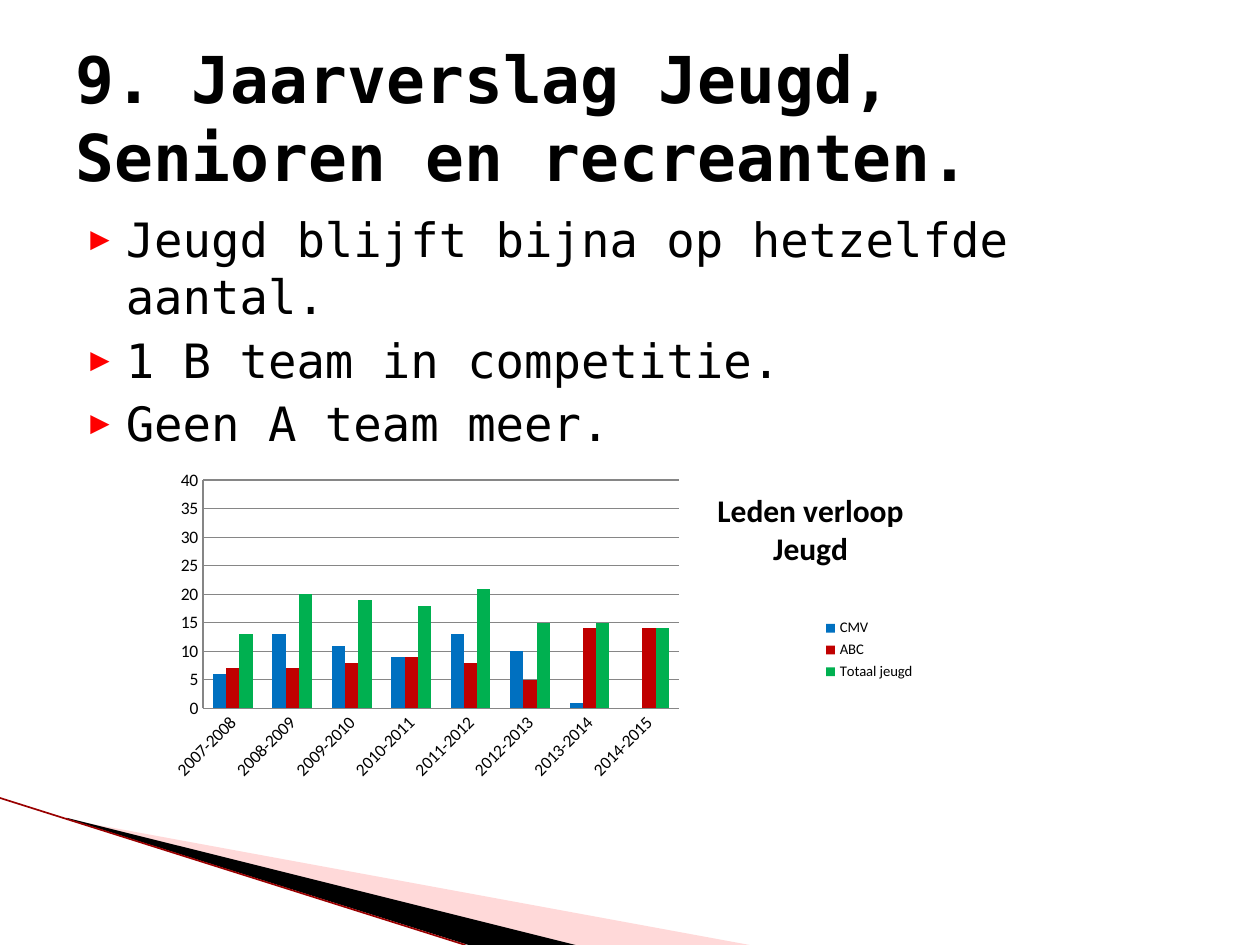
from lxml import etree
from pptx import Presentation
from pptx.chart.data import CategoryChartData
from pptx.dml.color import RGBColor
from pptx.enum.chart import XL_CHART_TYPE, XL_LEGEND_POSITION, XL_TICK_MARK
from pptx.enum.shapes import MSO_CONNECTOR
from pptx.enum.text import MSO_ANCHOR
from pptx.oxml.ns import qn
from pptx.util import Pt

COLUMN = XL_CHART_TYPE.COLUMN_CLUSTERED
RIGHT = XL_LEGEND_POSITION.RIGHT
NONE = XL_TICK_MARK.NONE
STRAIGHT = MSO_CONNECTOR.STRAIGHT
TOP, MIDDLE = MSO_ANCHOR.TOP, MSO_ANCHOR.MIDDLE
MONO, SANS = "DejaVu Sans Mono", "Calibri"
BLACK, GREY = "000000", "868686"
CHART = (87.8, 258.5, 442, 226.8)

POINTS = [
    "Jeugd blijft bijna op hetzelfde aantal.",
    "1 B team in competitie.",
    "Geen A team meer.",
]
YEARS = [f"{year}-{year + 1}" for year in range(2007, 2015)]
SERIES = [
    ("CMV", "0070C0", [6, 13, 11, 9, 13, 10, 1, None]),
    ("ABC", "C00000", [7, 7, 8, 9, 8, 5, 14, 14]),
    ("Totaal jeugd", "00B050", [13, 20, 19, 18, 21, 15, 15, 14]),
]


def color(code):
    """Turn a hex string into a colour."""
    return RGBColor.from_string(code)


def apply(item, values):
    """Set each attribute named in a dict."""
    for name, value in values.items():
        setattr(item, name, value)


def style(font, name, size, bold=False):
    """Give a font its name, size, weight and black colour."""
    apply(font, {"name": name, "size": Pt(size), "bold": bold})
    font.color.rgb = color(BLACK)


def add(parent, tag, **attrs):
    """Append an XML child with attributes."""
    node = etree.SubElement(parent, qn(tag))
    for name, value in attrs.items():
        node.set(name, str(value))
    return node


def wedge(slide, points, code, alpha=100):
    """Draw a closed outline with a plain fill."""
    pen = slide.shapes.build_freeform(*map(Pt, points[0]))
    pen.add_line_segments([(Pt(x), Pt(y)) for x, y in points[1:]])
    shape = pen.convert_to_shape()
    shape.shadow.inherit = False
    shape.line.fill.background()
    shape.fill.solid()
    shape.fill.fore_color.rgb = color(code)
    if alpha < 100:
        tint = shape.fill._xPr.find(qn("a:solidFill"))[0]
        add(tint, "a:alpha", val=alpha * 1000)


def edge(slide, ends, code, width):
    """Draw a straight line without shadow."""
    line = slide.shapes.add_connector(STRAIGHT, *map(Pt, ends))
    line.line.color.rgb = color(code)
    line.line.width = Pt(width)
    add(line._element.spPr, "a:effectLst")


def bullet(para):
    """Give a paragraph a hanging red triangle."""
    props = para._p.get_or_add_pPr()
    props.set("marL", str(Pt(28.8)))
    props.set("indent", str(Pt(-20.16)))
    add(add(props, "a:buClr"), "a:srgbClr", val="FF0000")
    add(props, "a:buSzPct", val=68000)
    add(props, "a:buFont", typeface=MONO)
    add(props, "a:buChar", char="▶")


def text(slide, box, lines, size, anchor=TOP, bold=False, marked=False):
    """Add a wrapped text box with one paragraph a line."""
    frame = slide.shapes.add_textbox(*map(Pt, box)).text_frame
    apply(frame, {"word_wrap": True, "vertical_anchor": anchor})
    for i, line in enumerate(lines):
        para = frame.add_paragraph() if i else frame.paragraphs[0]
        if i:
            para.space_before = Pt(4)
        if marked:
            bullet(para)
        run = para.add_run()
        run.text = line
        style(run.font, MONO, size, bold)


def place(node, inner=False, **spots):
    """Fix a chart part at a spot given in points."""
    for old in node.findall(qn("c:layout")):
        node.remove(old)
    layout = etree.Element(qn("c:layout"))
    manual = add(layout, "c:manualLayout")
    if inner:
        add(manual, "c:layoutTarget", val="inner")
    for side in "xy":
        add(manual, f"c:{side}Mode", val="edge")
    for name, value in spots.items():
        span = CHART[2] if name in "xw" else CHART[3]
        add(manual, f"c:{name}", val=value / span)
    after = node.find(qn("c:overlay"))
    if inner:
        node.insert(0, layout)
    elif after is not None:
        after.addprevious(layout)
    else:
        node.append(layout)


def axes(chart):
    """Format both axes and the grid."""
    cat, val = chart.category_axis, chart.value_axis
    for axis in (cat, val):
        apply(axis, {"major_tick_mark": NONE, "minor_tick_mark": NONE})
        style(axis.tick_labels.font, SANS, 10)
        axis.format.line.color.rgb = color(GREY)
    cat._element.txPr.find(qn("a:bodyPr")).set("rot", "-2700000")
    apply(val, {"minimum_scale": 0, "maximum_scale": 40, "major_unit": 5,
                "has_major_gridlines": True})
    grid = val.major_gridlines.format.line
    grid.color.rgb = color(GREY)
    grid.width = Pt(0.75)


def columns(slide):
    """Add the chart of youth members per season."""
    data = CategoryChartData()
    data.categories = YEARS
    for name, _, values in SERIES:
        data.add_series(name, values)
    chart = slide.shapes.add_chart(COLUMN, *map(Pt, CHART), data).chart
    style(chart.font, SANS, 10)
    apply(chart, {"has_title": True, "has_legend": True})
    frame = chart.chart_title.text_frame
    frame.text = "Leden verloop\nJeugd"
    for para in frame.paragraphs:
        style(para.runs[0].font, SANS, 18, True)
    apply(chart.legend, {"position": RIGHT, "include_in_layout": False})
    style(chart.legend.font, SANS, 8.4)
    plot = chart.plots[0]
    apply(plot, {"gap_width": 150, "overlap": 0, "vary_by_categories": False})
    for series, (_, code, _) in zip(plot.series, SERIES):
        series.invert_if_negative = False
        series.format.fill.solid()
        series.format.fill.fore_color.rgb = color(code)
    axes(chart)
    area = chart._chartSpace.chart.plotArea
    place(area, True, x=28.3, y=15.9, w=271.8, h=130.4)
    place(chart.chart_title._element, x=320, y=19)
    place(chart.legend._element, x=380, y=93, w=58, h=40)


def main():
    """Build and save the slide."""
    deck = Presentation()
    apply(deck, {"slide_width": Pt(720), "slide_height": Pt(540)})
    slide = deck.slides.add_slide(deck.slide_layouts[6])
    pink = [(39.6, 468.5), (428.4, 540), (328.3, 540), (39.6, 468)]
    black = [(38, 467.3), (329, 540), (267.8, 540), (39, 468)]
    wedge(slide, pink, "FFA2A2", 40)
    wedge(slide, black, BLACK)
    edge(slide, (0, 456, 266, 540), "990000", 0.95)
    text(slide, (36, 116.6, 648, 113.8), POINTS, 27, marked=True)
    title = ["9. Jaarverslag Jeugd, Senioren en recreanten."]
    text(slide, (36, 21.6, 648, 90), title, 36.9, MIDDLE, True)
    columns(slide)
    deck.save("out.pptx")


if __name__ == "__main__":
    main()
